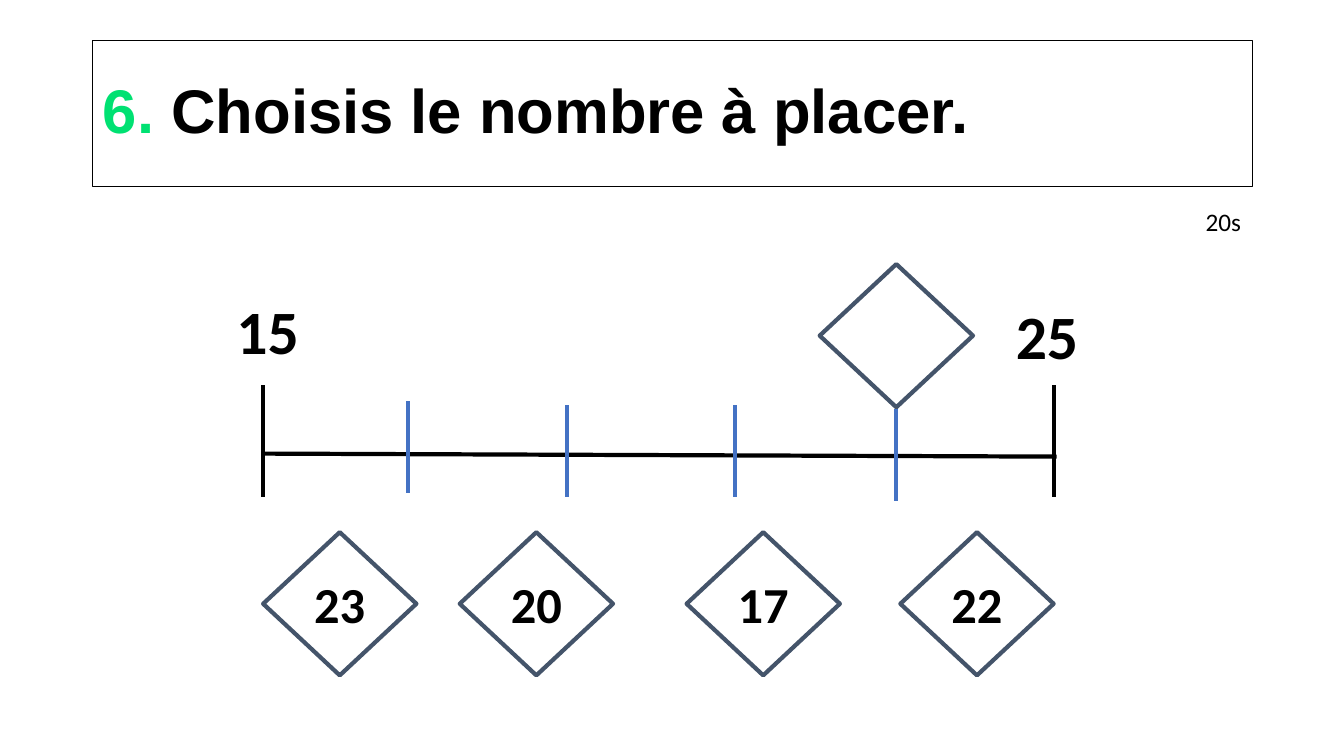
from lxml import etree
from pptx import Presentation
from pptx.dml.color import RGBColor
from pptx.enum.shapes import MSO_CONNECTOR, MSO_SHAPE
from pptx.enum.text import MSO_ANCHOR, MSO_AUTO_SIZE, PP_ALIGN
from pptx.oxml.ns import qn
from pptx.util import Inches, Pt

LINE = MSO_CONNECTOR.STRAIGHT
DIAMOND = MSO_SHAPE.DIAMOND
MIDDLE = MSO_ANCHOR.MIDDLE
NO_FIT = MSO_AUTO_SIZE.NONE
LEFT, CENTER = PP_ALIGN.LEFT, PP_ALIGN.CENTER

COLORS = {
    "white": "FFFFFF",
    "black": "000000",
    "green": "00E172",
    "slate": "44546A",
    "blue": "4472C4",
}


def color(name):
    return RGBColor.from_string(COLORS[name])


def add_span(para, text, size, font="Calibri", bold=True, ink="black"):
    span = para.add_run()
    span.text = text
    span.font.size = Pt(size)
    span.font.name = font
    span.font.bold = bold
    span.font.color.rgb = color(ink)


def place(shape, box):
    shape.left, shape.top, shape.width, shape.height = map(Inches, box)


def add_title(page, box):
    title = page.shapes.title
    place(title, box)
    title.fill.solid()
    title.fill.fore_color.rgb = color("white")
    title.line.color.rgb = color("black")
    title.line.width = Pt(1)
    frame = title.text_frame
    frame.auto_size = NO_FIT
    frame.vertical_anchor = MIDDLE
    para = frame.paragraphs[0]
    para.alignment = LEFT
    para.line_spacing = 0.9
    add_span(para, "6.", 44, "Arial", ink="green")
    add_span(para, " Choisis le nombre à placer.", 44, "Arial")


def add_label(page, box, text, size, align=CENTER, bold=True, wrap=True):
    label = page.shapes.add_textbox(*map(Inches, box))
    frame = label.text_frame
    frame.word_wrap = wrap
    para = frame.paragraphs[0]
    para.alignment = align
    add_span(para, text, size, bold=bold)


def add_line(page, start, end, ink):
    line = page.shapes.add_connector(LINE, *map(Inches, start + end))
    line.line.color.rgb = color(ink)
    line.line.width = Pt(3)
    etree.SubElement(line._element.spPr, qn("a:effectLst"))


def add_diamond(page, left, top, text=""):
    diamond = page.shapes.add_shape(DIAMOND, *map(Inches, (left, top, 1.52, 1.42)))
    diamond.shadow.inherit = False
    diamond.fill.background()
    diamond.line.color.rgb = color("slate")
    diamond.line.width = Pt(3)
    if text:
        frame = diamond.text_frame
        frame.vertical_anchor = MIDDLE
        para = frame.paragraphs[0]
        para.alignment = CENTER
        add_span(para, text, 36)


def add_number_line(page, box):
    left, top, width, height = box
    right, bottom = left + width, top + height
    add_line(page, (left, top + 0.68), (right + 0.03, top + 0.71), "black")
    for x in (left, right):
        add_line(page, (x, bottom), (x, top), "black")
    for offset, drop in ((1.44, 0.16), (3.01, 0.2), (4.68, 0.2), (6.28, 0.24)):
        x, y = left + offset, top + drop
        add_line(page, (x, y), (x, y + 0.91), "blue")
    add_label(page, (left - 0.44, top - 0.96, 0.97, 0.84), "15", 44)
    add_label(page, (right - 0.53, top - 0.91, 0.93, 0.84), "25", 44)
    add_diamond(page, left + 5.52, top - 1.2)


def add_choices(page, box):
    left, top = box[:2]
    for offset, number in ((0, "23"), (1.95, "20"), (4.2, "17"), (6.32, "22")):
        add_diamond(page, left + offset, top, number)


def main():
    deck = Presentation()
    deck.slide_width, deck.slide_height = Inches(13.33), Inches(7.5)
    page = deck.slides.add_slide(deck.slide_layouts[5])
    add_title(page, (0.92, 0.4, 11.5, 1.45))
    add_label(page, (11.86, 2, 0.56, 0.4), "20s", 18, LEFT, bold=False, wrap=False)
    add_number_line(page, (2.61, 3.82, 7.84, 1.11))
    add_choices(page, (2.61, 5.28, 7.84, 1.42))
    deck.save("out.pptx")


if __name__ == "__main__":
    main()
